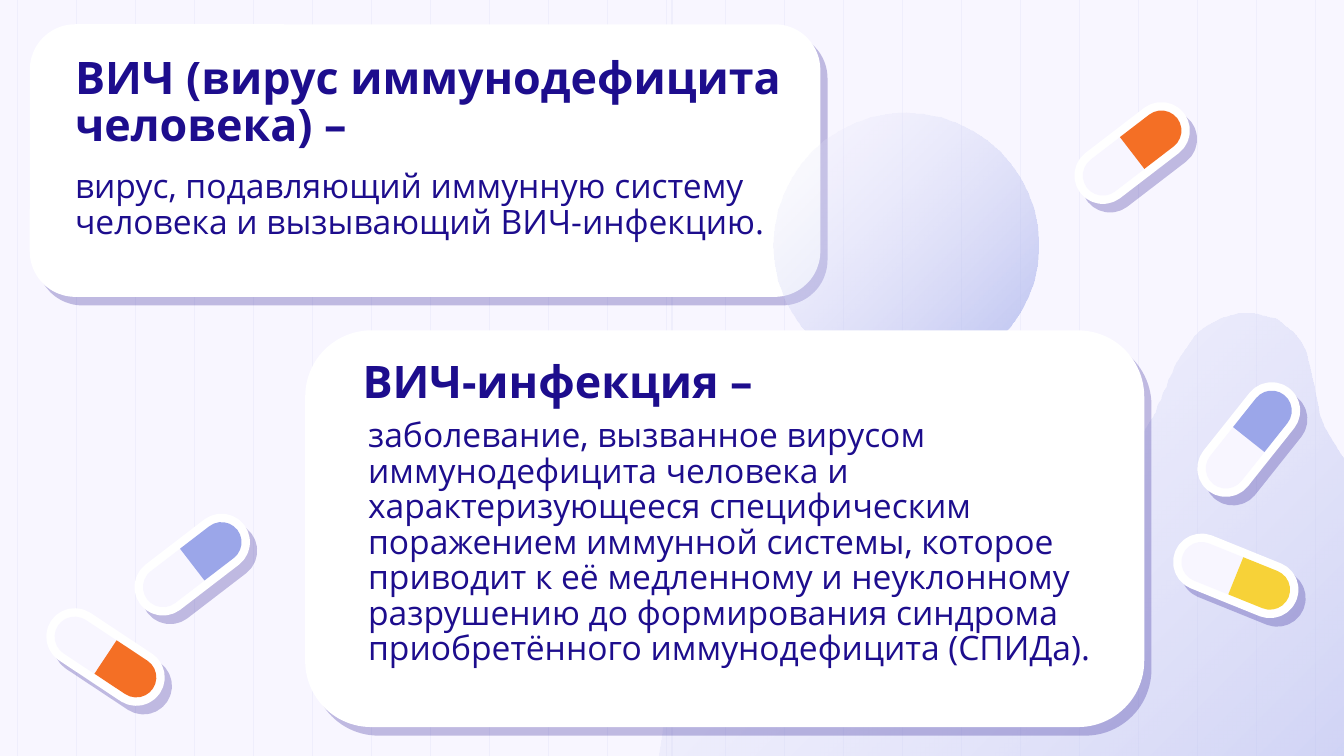
from dataclasses import dataclass

from lxml import etree
from pptx import Presentation
from pptx import util as u
from pptx.dml.color import RGBColor
from pptx.enum import shapes, text
from pptx.oxml.ns import qn

INK = RGBColor(0x1D, 0x0D, 0x8D)
PAPER = RGBColor(0xF8, 0xF6, 0xFF)
WHITE = RGBColor(0xFF, 0xFF, 0xFF)
MIST = RGBColor(0xEF, 0xEE, 0xFC)
LAVENDER = RGBColor(0x9B, 0xA6, 0xE9)
ORANGE = RGBColor(0xF4, 0x6F, 0x25)
YELLOW = RGBColor(0xF7, 0xD2, 0x38)

PILL_WIDTH, PILL_LENGTH = 21.5, 61


@dataclass
class Card:
    left: float
    top: float
    width: float
    height: float


@dataclass
class Pill:
    center_x: float
    center_y: float
    angle: float
    color: RGBColor


@dataclass
class Passage:
    placeholder: int
    box: tuple
    words: str
    heading: bool


CARDS = [Card(16, 13, 423.5, 146), Card(163.5, 177, 449.5, 212.5)]

PILLS = [
    Pill(606.5, 82, 52.5, ORANGE),
    Pill(662, 308.5, 112, YELLOW),
    Pill(669, 235.5, 38.5, LAVENDER),
    Pill(56.5, 352, 123.5, ORANGE),
    Pill(103, 302.5, 52.5, LAVENDER),
]

PASSAGES = [
    Passage(0, (33, 31.5, 435, 48.5), "ВИЧ (вирус иммунодефицита человека) –", True),
    Passage(1, (33, 84, 404.5, 71.5),
            "вирус, подавляющий иммунную систему человека и вызывающий "
            "ВИЧ-инфекцию.", False),
    Passage(3, (187, 181.5, 435, 48.5), "ВИЧ-инфекция –", True),
    Passage(2, (190, 217.5, 437, 157),
            "заболевание, вызванное вирусом иммунодефицита человека и "
            "характеризующееся специфическим поражением иммунной системы, "
            "которое приводит к её медленному и неуклонному разрушению до "
            "формирования синдрома приобретённого иммунодефицита (СПИДа).", False),
]

# Wave outline in inches: a start, then (control, control, end) curves
WAVE_START = (5.81, 7.36)
WAVE_CURVES = [
    ((6.6, 7.79), (7.6, 7.57), (8.14, 6.84)),
    ((8.39, 6.51), (8.64, 6.18), (8.96, 6.05)),
    ((9.39, 5.88), (9.92, 5.99), (10.33, 5.77)),
    ((10.65, 5.59), (10.85, 5.22), (10.86, 4.85)),
    ((10.87, 4.49), (10.71, 4.12), (10.46, 3.85)),
    ((10.23, 3.61), (9.91, 3.41), (9.82, 3.09)),
    ((9.74, 2.8), (9.8, 2.55), (9.5, 2.38)),
    ((9.29, 2.27), (9, 2.35), (8.85, 2.55)),
    ((8.72, 2.71), (8.67, 2.93), (8.57, 3.11)),
    ((8.3, 3.57), (7.74, 3.76), (7.22, 3.85)),
    ((6.69, 3.95), (6.14, 3.99), (5.7, 4.29)),
    ((5.65, 4.33), (5.6, 4.36), (5.56, 4.4)),
    ((4.6, 5.2), (4.7, 6.7), (5.77, 7.33)),
]


def points(*lengths: float) -> list:
    return [u.Pt(length) for length in lengths]


def finish(shape, color: RGBColor) -> None:
    shape.fill.solid()
    shape.fill.fore_color.rgb = color
    shape.line.fill.background()
    shape.shadow.inherit = False


def cast_shadow(shape) -> None:
    effects = shape._element.spPr.find(qn("a:effectLst"))
    shadow = etree.SubElement(effects, qn("a:outerShdw"), blurRad="0", dist=str(u.Pt(6)),
                              dir="3000000", algn="bl", rotWithShape="0")
    tint = etree.SubElement(shadow, qn("a:srgbClr"), val=str(INK))
    etree.SubElement(tint, qn("a:alpha"), val="25000")


def fade(shape) -> None:
    """Diagonal translucent gradient without an outline."""
    shape.fill.gradient()
    shape.fill.gradient_angle = 315
    for stop, color, position in zip(shape.fill.gradient_stops, (MIST, LAVENDER), (0, 1)):
        stop.color.rgb = color
        stop.position = position
    for tint, alpha in zip(shape._element.spPr.iter(qn("a:srgbClr")), ("13000", "69000")):
        for child in list(tint):
            tint.remove(child)
        etree.SubElement(tint, qn("a:alpha"), val=alpha)
    shape.line.fill.background()
    shape.shadow.inherit = False


def draw_stripe(slide, x: float) -> None:
    stripe = slide.shapes.add_connector(shapes.MSO_CONNECTOR.STRAIGHT,
                                        *points(x, -20, x, 425.5))
    stripe.line.color.rgb = MIST
    stripe.line.width = u.Pt(0.75)
    etree.SubElement(stripe._element.spPr, qn("a:effectLst"))


def draw_wave(slide, steps: int = 12) -> None:
    outline, start = [], WAVE_START
    for first, second, end in WAVE_CURVES:
        for step in range(1, steps + 1):
            t = step / steps
            s = 1 - t
            outline.append(tuple(
                72 * (s**3 * a + 3 * s * s * t * b + 3 * s * t * t * c + t**3 * d)
                for a, b, c, d in zip(start, first, second, end)))
        start = end
    builder = slide.shapes.build_freeform(72 * WAVE_START[0], 72 * WAVE_START[1],
                                          scale=u.Pt(1))
    builder.add_line_segments(outline, close=True)
    fade(builder.convert_to_shape())


def draw_card(slide, card: Card) -> None:
    panel = slide.shapes.add_shape(
        shapes.MSO_SHAPE.ROUNDED_RECTANGLE,
        *points(card.left, card.top, card.width, card.height))
    finish(panel, WHITE)
    cast_shadow(panel)


def draw_pill(slide, pill: Pill) -> None:
    group = slide.shapes.add_group_shape()
    left, middle = pill.center_x - PILL_WIDTH / 2, pill.center_y
    shell = group.shapes.add_shape(
        shapes.MSO_SHAPE.ROUNDED_RECTANGLE,
        *points(left, middle - PILL_LENGTH / 2, PILL_WIDTH, PILL_LENGTH))
    shell.adjustments[0] = 0.5
    shell.rotation = pill.angle
    finish(shell, WHITE)
    shell.line.color.rgb = WHITE
    shell.line.width = u.Pt(9)
    cast_shadow(shell)

    # Each half is turned about its own centre, a quarter length along the axis
    half = PILL_LENGTH / 2
    for turn, color in ((180, PAPER), (0, pill.color)):
        angle = (pill.angle + turn) % 360
        cap = group.shapes.add_shape(shapes.MSO_SHAPE.ROUND_2_SAME_RECTANGLE,
                                     *points(0, 0, PILL_WIDTH, half))
        cap.left = u.Pt(left + math.sin(math.radians(angle)) * half / 2)
        cap.top = u.Pt(middle - half / 2 - math.cos(math.radians(angle)) * half / 2)
        cap.adjustments[0] = 0.5
        cap.rotation = angle
        finish(cap, color)


def write_passage(slide, passage: Passage) -> None:
    holder = slide.placeholders[passage.placeholder]
    holder.left, holder.top, holder.width, holder.height = points(*passage.box)
    frame = holder.text_frame
    frame.text = passage.words
    paragraph = frame.paragraphs[0]
    anchor = text.MSO_ANCHOR.MIDDLE if passage.heading else text.MSO_ANCHOR.TOP
    inset = u.Pt(7.2)
    formats = {
        frame: {"word_wrap": True, "auto_size": text.MSO_AUTO_SIZE.NONE,
                "vertical_anchor": anchor, "margin_left": inset, "margin_right": inset,
                "margin_top": inset, "margin_bottom": inset},
        paragraph: {"alignment": text.PP_ALIGN.LEFT, "line_spacing": 0.88,
                    "space_before": u.Pt(0),
                    "space_after": u.Pt(0 if passage.heading else 16)},
        paragraph.runs[0].font: {"name": "Open Sans", "bold": passage.heading,
                                 "size": u.Pt(24 if passage.heading else 18)},
    }
    for target, values in formats.items():
        for attribute, value in values.items():
            setattr(target, attribute, value)
    paragraph.runs[0].font.color.rgb = INK

    # No bullet or hanging indent
    properties = paragraph._p.get_or_add_pPr()
    properties.set("marL", "0")
    properties.set("indent", "0")
    etree.SubElement(properties, qn("a:buNone"))
    slide.shapes._spTree.append(holder._element)  # bring above the cards


def main() -> None:
    deck = Presentation()
    deck.slide_width, deck.slide_height = points(720, 405)
    slide = deck.slides.add_slide(deck.slide_layouts[4])
    spare = slide.placeholders[4]._element
    spare.getparent().remove(spare)

    # Background
    slide.background.fill.solid()
    slide.background.fill.fore_color.rgb = PAPER
    for x in [9.4 + 31.6 * column for column in range(23)] + [360]:
        draw_stripe(slide, x)
    draw_wave(slide)

    # Cards, with the bubble between them
    upper_card, lower_card = CARDS
    draw_card(slide, upper_card)
    fade(slide.shapes.add_shape(shapes.MSO_SHAPE.OVAL, *points(414.5, 60.5, 142, 142)))
    draw_card(slide, lower_card)

    for pill in PILLS:
        draw_pill(slide, pill)
    for passage in PASSAGES:
        write_passage(slide, passage)
    deck.save("out.pptx")


import math

if __name__ == "__main__":
    main()
